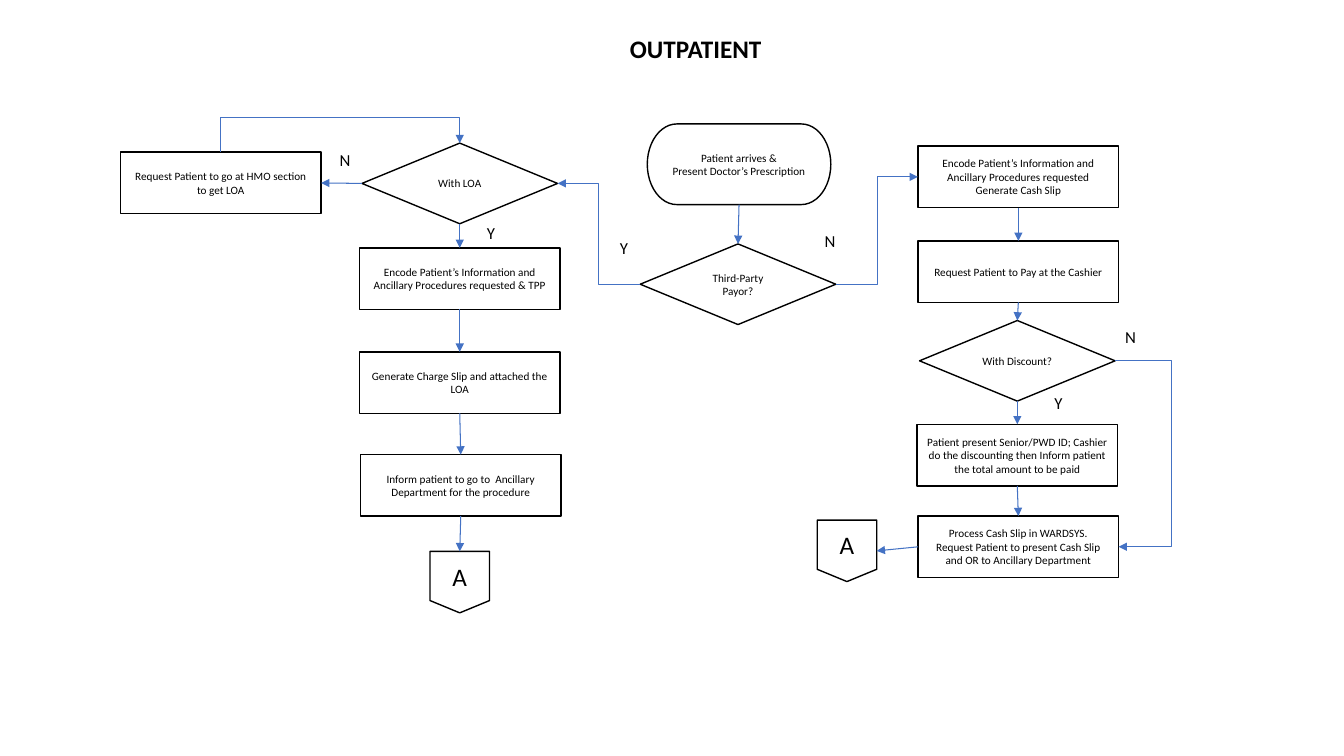
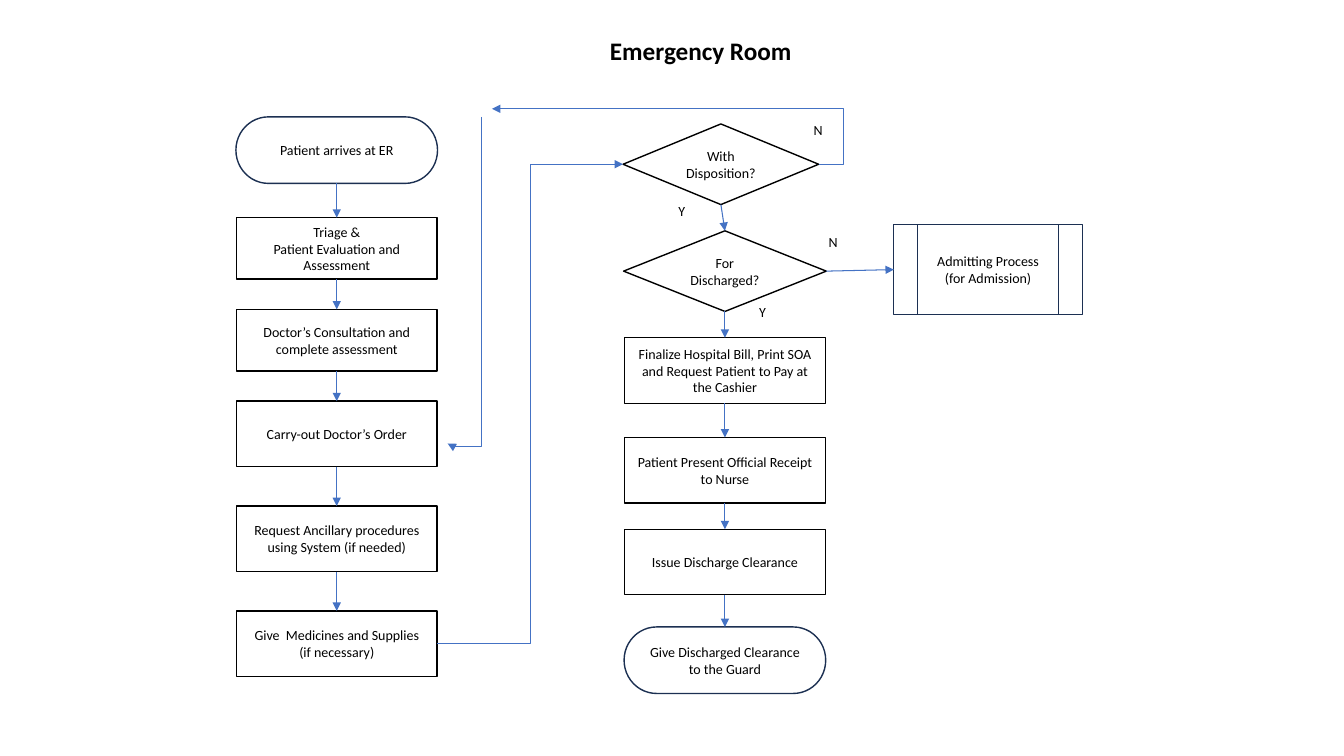
from lxml.etree import SubElement
from pptx import Presentation
from pptx.dml.color import RGBColor
from pptx.enum.shapes import MSO_CONNECTOR, MSO_SHAPE
from pptx.enum.text import MSO_ANCHOR, PP_ALIGN
from pptx.oxml.ns import qn
from pptx.util import Emu, Inches, Pt

BLACK = RGBColor(0x00, 0x00, 0x00)
WHITE = RGBColor(0xFF, 0xFF, 0xFF)
BLUE = RGBColor(0x44, 0x72, 0xC4)
NAVY = RGBColor(0x1C, 0x30, 0x52)
FONT = "Calibri"

# kind: preset, width, height, line colour
KINDS = {
    "start": (MSO_SHAPE.FLOWCHART_TERMINATOR, 1.82, 0.8, BLACK),
    "end": (MSO_SHAPE.FLOWCHART_TERMINATOR, 2, 0.66, NAVY),
    "ask": (MSO_SHAPE.FLOWCHART_DECISION, 1.94, 0.8, BLACK),
    "broad": (MSO_SHAPE.FLOWCHART_DECISION, 2.01, 0.8, BLACK),
    "step": (MSO_SHAPE.FLOWCHART_PROCESS, 1.99, 0.61, BLACK),
    "tall": (MSO_SHAPE.FLOWCHART_PROCESS, 1.99, 0.65, BLACK),
    "sub": (MSO_SHAPE.FLOWCHART_PREDEFINED_PROCESS, 1.87, 0.89, NAVY),
    "page": (MSO_SHAPE.FLOWCHART_OFFPAGE_CONNECTOR, 0.59, 0.61, BLACK),
}
PAGE_SIZE = 18
SITES = {"top": 0, "left": 1, "bottom": 2, "right": 3}

# Column centres
HMO, LOA, MID, CASH = 2.19, 4.56, 7.32, 10.1
CARE, EXIT = 3.34, 7.19

# nodes: name -> kind, centre, top, text
# chains: nodes joined downwards
# links: from, to, then the axis and place of the middle run of a bent line
# labels: left, top, text
CHARTS = [
    {
        "title": "OUTPATIENT", "centre": 6.9, "top": 0.28,
        "size": 8, "label size": 12,
        "nodes": {
            "arrive": ("start", 7.33, 1.23, "Patient arrives &\nPresent Doctor’s Prescription"),
            "payor": ("ask", MID, 2.42, "Third-Party Payor?"),
            "hmo": ("step", HMO, 1.51, "Request Patient to go at HMO section to get LOA"),
            "loa": ("ask", LOA, 1.42, "With LOA"),
            "encode": ("step", LOA, 2.46, "Encode Patient’s Information and Ancillary Procedures requested & TPP"),
            "charge": ("step", LOA, 3.49, "Generate Charge Slip and attached the LOA"),
            "inform": ("step", LOA + 0.01, 4.51, "Inform patient to go to  Ancillary Department for the procedure"),
            "page": ("page", LOA, 5.47, "A"),
            "slip": ("step", CASH, 1.45, "Encode Patient’s Information and Ancillary Procedures requested\nGenerate Cash Slip"),
            "pay": ("step", CASH, 2.39, "Request Patient to Pay at the Cashier"),
            "discount": ("ask", CASH - 0.01, 3.18, "With Discount?"),
            "senior": ("step", CASH - 0.01, 4.21, "Patient present Senior/PWD ID; Cashier do the discounting then Inform patient the total amount to be paid"),
            "process": ("step", CASH, 5.12, "Process Cash Slip in WARDSYS.\nRequest Patient to present Cash Slip and OR to Ancillary Department"),
            "cash page": ("page", 8.4, 5.16, "A"),
        },
        "chains": [
            ("arrive", "payor"),
            ("loa", "encode", "charge", "inform", "page"),
            ("slip", "pay", "discount", "senior", "process"),
        ],
        "links": [
            (("payor", "right"), ("slip", "left"), "x", 8.7),
            (("payor", "left"), ("loa", "right"), "x", 5.94),
            (("loa", "left"), ("hmo", "right")),
            (("hmo", "top"), ("loa", "top"), "y", 1.17),
            (("discount", "right"), ("process", "right"), "x", 11.62),
            (("process", "left"), ("cash page", "right")),
        ],
        "labels": [
            (3.27, 1.44, "N"), (4.73, 2.16, "Y"), (6.05, 2.31, "Y"),
            (8.08, 2.24, "N"), (10.36, 3.85, "Y"), (11.06, 3.19, "N"),
        ],
    },
    {
        "title": "Emergency Room", "centre": 6.95, "top": 0.3,
        "size": 10, "label size": 10,
        "nodes": {
            "arrive": ("end", CARE, 1.16, "Patient arrives at ER"),
            "triage": ("step", CARE, 2.16, "Triage &\nPatient Evaluation and Assessment"),
            "consult": ("step", CARE, 3.07, "Doctor’s Consultation and complete assessment"),
            "order": ("tall", CARE, 3.98, "Carry-out Doctor’s Order"),
            "request": ("tall", CARE, 5.02, "Request Ancillary procedures using System (if needed)"),
            "give": ("tall", CARE, 6.06, "Give  Medicines and Supplies\n(if necessary)"),
            "ready": ("ask", EXIT - 0.04, 1.23, "With Disposition?"),
            "leave": ("broad", EXIT, 2.29, "For Discharged?"),
            "bill": ("tall", EXIT, 3.35, "Finalize Hospital Bill, Print SOA and Request Patient to Pay at the Cashier"),
            "receipt": ("tall", EXIT, 4.34, "Patient Present Official Receipt to Nurse"),
            "issue": ("tall", EXIT, 5.25, "Issue Discharge Clearance"),
            "guard": ("end", EXIT, 6.22, "Give Discharged Clearance to the Guard"),
            "admit": ("sub", 9.8, 2.23, "Admitting Process\n(for Admission)"),
        },
        "chains": [
            ("arrive", "triage", "consult", "order", "request", "give"),
            ("ready", "leave", "bill", "receipt", "issue", "guard"),
        ],
        "links": [
            (("give", "right"), ("ready", "left"), "x", 5.26),
            (("ready", "right"), (4.88, 1.08), "x", 8.37),
            ((4.78, 1.16), (4.44, 4.4), "y", 4.43),
            (("leave", "right"), ("admit", "left")),
        ],
        "labels": [
            (7.97, 1.16, "N"), (6.63, 1.96, "Y"),
            (8.12, 2.27, "N"), (7.43, 2.96, "Y"),
        ],
    },
]


def write(shape, text, size, align=PP_ALIGN.CENTER, bold=False):
    frame = shape.text_frame
    frame.text = text
    for para in frame.paragraphs:
        para.alignment = align
        for run in para.runs:
            font = run.font
            font.name, font.size, font.bold = FONT, Pt(size), bold
            font.color.rgb = BLACK


def add_title(slide, chart):
    title = slide.shapes.title
    width = 10
    title.left, title.top = Inches(chart["centre"] - width / 2), Inches(chart["top"])
    title.width, title.height = Inches(width), Inches(0.4)
    title.text_frame.vertical_anchor = MSO_ANCHOR.MIDDLE
    write(title, chart["title"], 18, bold=True)


def add_node(slide, kind, centre, top, text, size):
    preset, width, height, color = KINDS[kind]
    node = slide.shapes.add_shape(preset, Inches(centre - width / 2), Inches(top),
                                  Inches(width), Inches(height))
    node.shadow.inherit = False
    node.fill.solid()
    node.fill.fore_color.rgb = WHITE
    node.line.color.rgb = color
    node.line.width = Pt(1)
    node.text_frame.word_wrap = True
    node.text_frame.vertical_anchor = MSO_ANCHOR.MIDDLE
    write(node, text, PAGE_SIZE if kind == "page" else size)
    return node


def bend(line, axis, place):
    """Put the middle run of an elbow at the given x or y."""
    x1, y1, x2, y2 = line.begin_x, line.begin_y, line.end_x, line.end_y
    wide, high = x2 - x1, y2 - y1
    props = line._element.spPr
    if axis == "x":
        share = (Inches(place) - x1) / wide
    else:
        share = (Inches(place) - y1) / high
        line.width, line.height = Emu(abs(high)), Emu(abs(wide))
        line.left = Emu((x1 + x2 - abs(high)) // 2)
        line.top = Emu((y1 + y2 - abs(wide)) // 2)
        xfrm = props.find(qn("a:xfrm"))
        for name in ("flipH", "flipV"):
            xfrm.attrib.pop(name, None)
        xfrm.set("rot", str((90 if high > 0 else 270) * 60000))
        if (high > 0) == (wide > 0):
            xfrm.set("flipV", "1")
    guides = props.find(qn("a:prstGeom")).get_or_add_avLst()
    SubElement(guides, qn("a:gd"), name="adj1", fmla=f"val {round(share * 100000)}")


def add_link(slide, nodes, start, end, axis=None, place=None):
    kind = MSO_CONNECTOR.ELBOW if axis else MSO_CONNECTOR.STRAIGHT
    free = [(0, 0) if tip[0] in nodes else tip for tip in (start, end)]
    line = slide.shapes.add_connector(kind, *(Inches(n) for tip in free for n in tip))
    for tip, glue in ((start, line.begin_connect), (end, line.end_connect)):
        if tip[0] in nodes:
            glue(nodes[tip[0]], SITES[tip[1]])
    if axis:
        bend(line, axis, place)
    line.line.color.rgb = BLUE
    line.line.width = Pt(0.75)
    SubElement(line.line._get_or_add_ln(), qn("a:tailEnd"), type="triangle")
    SubElement(line._element.spPr, qn("a:effectLst"))


def add_label(slide, left, top, text, size):
    box = slide.shapes.add_textbox(Inches(left), Inches(top), Inches(0.42), Inches(0.3))
    box.text_frame.word_wrap = True
    write(box, text, size, PP_ALIGN.LEFT)


def draw(slide, chart):
    add_title(slide, chart)
    nodes = {name: add_node(slide, *node, chart["size"])
             for name, node in chart["nodes"].items()}
    for chain in chart["chains"]:
        for above, below in zip(chain, chain[1:]):
            add_link(slide, nodes, (above, "bottom"), (below, "top"))
    for link in chart["links"]:
        add_link(slide, nodes, *link)
    for label in chart["labels"]:
        add_label(slide, *label, chart["label size"])


def main():
    deck = Presentation()
    deck.slide_width, deck.slide_height = Inches(13.33), Inches(7.5)
    for chart in CHARTS:
        draw(deck.slides.add_slide(deck.slide_layouts[5]), chart)
    deck.save("out.pptx")


if __name__ == "__main__":
    main()
